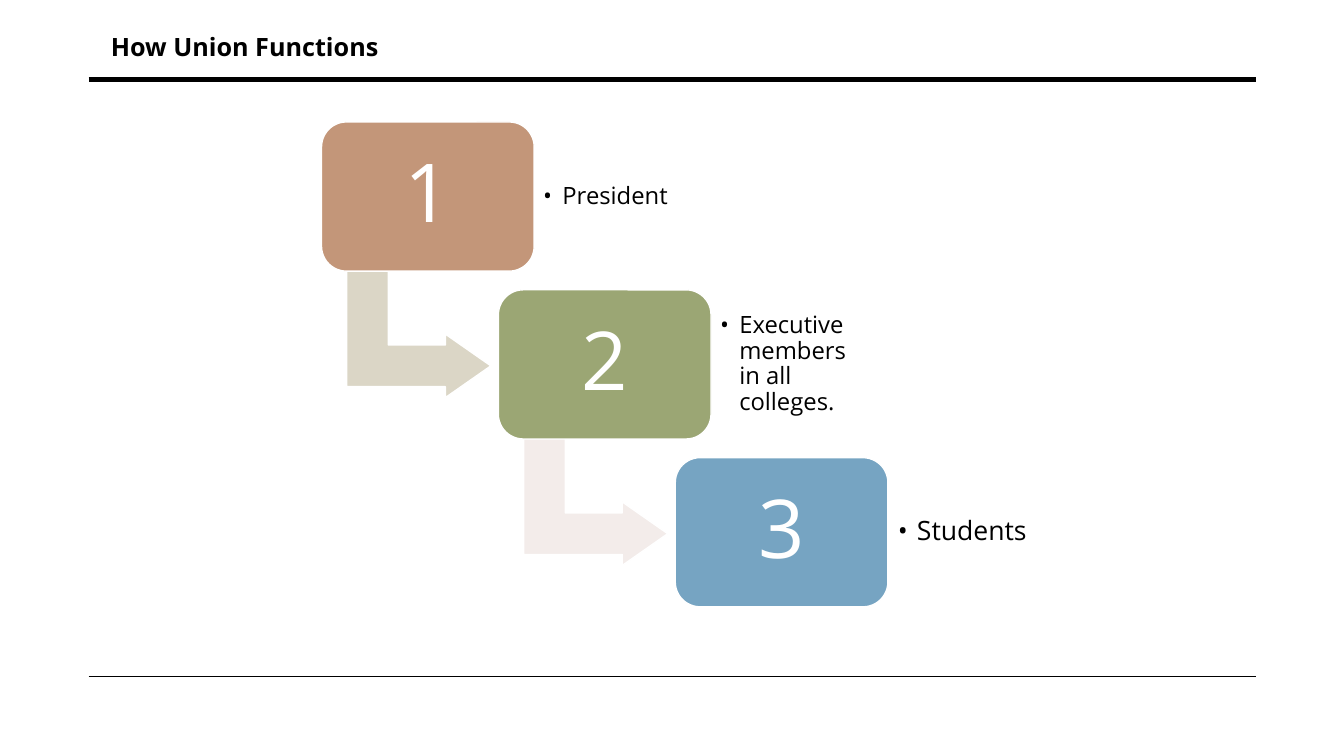
from dataclasses import dataclass

from lxml.etree import SubElement
from pptx import Presentation
from pptx.dml.color import RGBColor
from pptx.enum.shapes import MSO_CONNECTOR, MSO_SHAPE
from pptx.enum.text import MSO_ANCHOR, MSO_AUTO_SIZE, PP_ALIGN
from pptx.oxml.ns import qn
from pptx.util import Pt

EMU_PER_PX = 4572  # 200 px to the inch


@dataclass(frozen=True)
class Theme:
    font: str = "Open Sans"
    ink: str = "000000"
    paper: str = "FFFFFF"
    title_size: int = 18
    number_size: int = 58
    outline: int = 1


@dataclass(frozen=True)
class Rule:
    y: int
    weight: float


@dataclass(frozen=True)
class Step:
    role: str
    fill: str
    role_size: int = 17
    role_inset: int = 18
    arrow_fill: str | None = None


THEME = Theme()
RULES = [Rule(158, 3.5), Rule(1342, 1)]
STEPS = [
    Step("President", "C39679", arrow_fill="DBD6C6"),
    Step("Executive members in all colleges.", "9BA674", arrow_fill="F3ECEA"),
    Step("Students", "76A4C2", role_size=19, role_inset=20),
]

# Staircase geometry in px
FIRST_LEFT, FIRST_TOP = 638, 242
STEP_RIGHT, STEP_DOWN = 351, 333
BOX_WIDTH, BOX_HEIGHT = 422, 296
HANGING = 38


def px(length: int) -> int:
    return length * EMU_PER_PX


def bounds(left: int, top: int, width: int, height: int) -> tuple[int, ...]:
    return px(left), px(top), px(width), px(height)


def set_all(target, values: dict) -> None:
    for name, value in values.items():
        setattr(target, name, value)


def write(frame, text: str, size: int, color: str, inset: tuple[int, int],
          bold: bool = False, align=PP_ALIGN.LEFT, spacing: float = 0.9,
          anchor=MSO_ANCHOR.MIDDLE, wrap: bool = True):
    """Fill a text frame with one formatted paragraph and return it."""
    across, down = px(inset[0]), px(inset[1])
    set_all(frame, {
        "word_wrap": wrap, "vertical_anchor": anchor,
        "margin_left": across, "margin_right": across,
        "margin_top": down, "margin_bottom": down,
    })
    paragraph = frame.paragraphs[0]
    set_all(paragraph, {"alignment": align, "line_spacing": spacing})
    run = paragraph.add_run()
    run.text = text
    set_all(run.font, {"name": THEME.font, "size": Pt(size), "bold": bold})
    run.font.color.rgb = RGBColor.from_string(color)
    return paragraph


def add_bullet(paragraph) -> None:
    paragraph.level = 1
    properties = paragraph._p.get_or_add_pPr()
    properties.set("marL", str(px(HANGING)))
    properties.set("indent", str(-px(HANGING)))
    bullet_color = SubElement(properties, qn("a:buClr"))
    SubElement(bullet_color, qn("a:srgbClr"), val=THEME.ink)
    SubElement(properties, qn("a:buFont"), typeface=THEME.font)
    SubElement(properties, qn("a:buChar"), char="•")


def add_title(slide, text: str) -> None:
    title = slide.shapes.title
    left, top, width, height = bounds(200, 52, 574, 80)
    set_all(title, {"left": left, "top": top, "width": width, "height": height})
    write(title.text_frame, text, THEME.title_size, THEME.ink, (20, 10),
          bold=True, spacing=1.0, anchor=MSO_ANCHOR.TOP, wrap=False)
    title.text_frame.auto_size = MSO_AUTO_SIZE.SHAPE_TO_FIT_TEXT


def add_rule(slide, rule: Rule) -> None:
    line = slide.shapes.add_connector(
        MSO_CONNECTOR.STRAIGHT, px(176), px(rule.y), px(2492), px(rule.y))
    line.line.width = Pt(rule.weight)
    line.line.color.rgb = RGBColor.from_string(THEME.ink)
    SubElement(line._element.spPr, qn("a:effectLst"))


def add_block(slide, preset, place: tuple[int, ...], fill: str,
              adjustments: list[float]):
    block = slide.shapes.add_shape(preset, *bounds(*place))
    block.shadow.inherit = False
    block.fill.solid()
    block.fill.fore_color.rgb = RGBColor.from_string(fill)
    block.line.color.rgb = RGBColor.from_string(THEME.paper)
    block.line.width = Pt(THEME.outline)
    for index, value in enumerate(adjustments):
        block.adjustments[index] = value
    return block


def add_step(slide, index: int, step: Step) -> None:
    left = FIRST_LEFT + index * STEP_RIGHT
    top = FIRST_TOP + index * STEP_DOWN

    # Arrow leading down to the next step
    if step.arrow_fill:
        arrow = add_block(slide, MSO_SHAPE.BENT_UP_ARROW,
                          (left + 67, top + 278, 252, 286),
                          step.arrow_fill, [0.328, 0.25, 0.358])
        arrow.rotation = 90

    # Numbered box
    box = add_block(slide, MSO_SHAPE.ROUNDED_RECTANGLE,
                    (left, top, BOX_WIDTH, BOX_HEIGHT), step.fill, [0.167])
    write(box.text_frame, str(index + 1), THEME.number_size, THEME.paper,
          (48, 48), align=PP_ALIGN.CENTER)

    # Role beside the box
    role = slide.shapes.add_textbox(
        *bounds(left + BOX_WIDTH, top + 28, 308, 240))
    add_bullet(write(role.text_frame, step.role, step.role_size, THEME.ink,
                     (step.role_inset, step.role_inset)))


def main() -> None:
    deck = Presentation()
    set_all(deck, {"slide_width": px(2667), "slide_height": px(1500)})
    slide = deck.slides.add_slide(deck.slide_layouts[5])
    add_title(slide, "How Union Functions")
    for rule in RULES:
        add_rule(slide, rule)
    for index, step in enumerate(STEPS):
        add_step(slide, index, step)
    deck.save("out.pptx")


if __name__ == "__main__":
    main()
